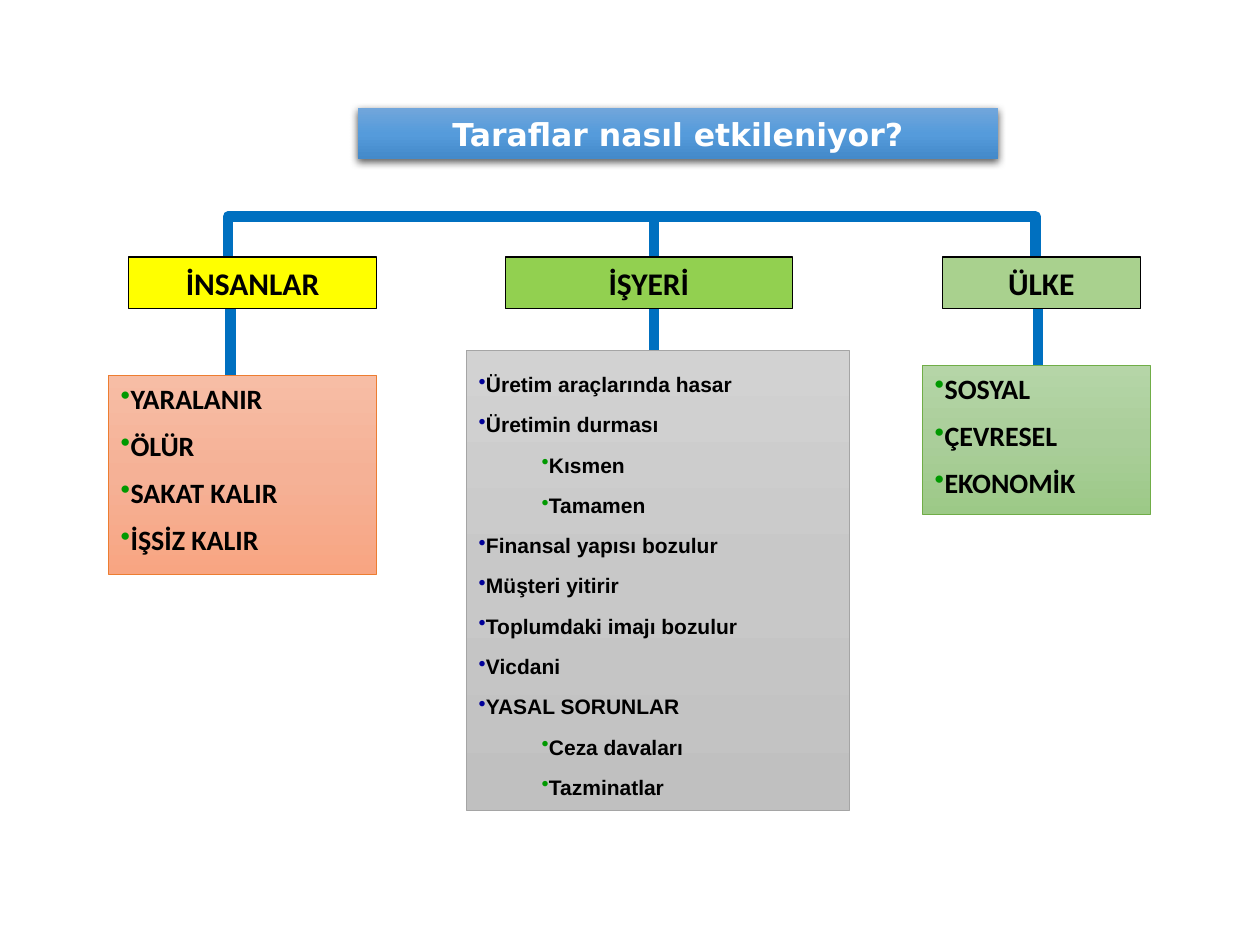
import copy

import lxml.etree
import pptx
import pptx.dml.color
import pptx.enum.shapes
import pptx.enum.text
import pptx.oxml.ns
import pptx.util

Inches = pptx.util.Inches
Pt = pptx.util.Pt
ALIGN = pptx.enum.text.PP_ALIGN
ANCHOR = pptx.enum.text.MSO_ANCHOR

BLUE, GREEN, NAVY, BLACK = "0070C0", "009900", "000099", "000000"


def rgb(color):
    return pptx.dml.color.RGBColor.from_string(color)


def add_xml(parent, tag, **attributes):
    return lxml.etree.SubElement(parent, pptx.oxml.ns.qn(tag), attributes)


def set_line(shape, color, width):
    shape.line.color.rgb = rgb(color)
    shape.line.width = Pt(width)


def fill_gradient(shape, colors):
    """Fill from top to bottom with three evenly spaced colours."""
    shape.fill.gradient()
    shape.fill.gradient_angle = 270
    first = shape.fill._fill._gradFill.gsLst[0]
    first.addnext(copy.deepcopy(first))
    for index, (stop, color) in enumerate(zip(shape.fill.gradient_stops, colors)):
        stop.position = index / 2
        stop.color.rgb = rgb(color)


def add_box(page, left, top, width, height, fill, line=None, line_width=0.5):
    """Add a rectangle; fill is one colour or a list of gradient colours."""
    box = page.shapes.add_shape(
        pptx.enum.shapes.MSO_SHAPE.RECTANGLE,
        Inches(left), Inches(top), Inches(width), Inches(height))
    box.shadow.inherit = False
    if isinstance(fill, str):
        box.fill.solid()
        box.fill.fore_color.rgb = rgb(fill)
    else:
        fill_gradient(box, fill)
    if line:
        set_line(box, line, line_width)
    else:
        box.line.fill.background()
    box.text_frame.word_wrap = True
    return box


def add_shadow(box):
    effects = box._element.spPr.find(pptx.oxml.ns.qn("a:effectLst"))
    shadow = add_xml(effects, "a:outerShdw", blurRad=str(Pt(4.5)), dist=str(Pt(1.5)),
                     dir="5400000", algn="ctr", rotWithShape="0")
    color = add_xml(shadow, "a:srgbClr", val=BLACK)
    add_xml(color, "a:alpha", val="63000")


def write(para, text, font="Calibri", size=18, color=BLACK, align=ALIGN.LEFT,
          bullet=None, level=0, before=0, spacing=1.0):
    para.alignment = align
    para.level = level
    para.space_before = Pt(before)
    para.line_spacing = spacing
    if bullet:
        properties = para._p.get_or_add_pPr()
        properties.set("marL", str(Inches(0.5) * level))
        properties.set("indent", "0")
        add_xml(add_xml(properties, "a:buClr"), "a:srgbClr", val=bullet)
        add_xml(properties, "a:buChar", char="•")
    span = para.add_run()
    span.text = text
    span.font.name = font
    span.font.size = Pt(size)
    span.font.bold = True
    span.font.color.rgb = rgb(color)


def add_label(page, place, fill, text, line=None, **text_format):
    box = add_box(page, *place, fill, line, 0.75)
    box.text_frame.vertical_anchor = ANCHOR.MIDDLE
    write(box.text_frame.paragraphs[0], text, align=ALIGN.CENTER, **text_format)
    return box


def add_list(page, place, fill, line, items, bullets, **text_format):
    """Add a bulleted list of (text, level) items; bullets has a colour per level."""
    box = add_box(page, *place, fill, line)
    frame = box.text_frame
    frame.vertical_anchor = ANCHOR.TOP
    for index, (text, level) in enumerate(items):
        para = frame.add_paragraph() if index else frame.paragraphs[0]
        write(para, text, level=level, bullet=bullets[level], **text_format)


def add_stem(page, x, top, bottom):
    stem = page.shapes.add_connector(
        pptx.enum.shapes.MSO_CONNECTOR.STRAIGHT,
        Inches(x), Inches(top), Inches(x), Inches(bottom))
    set_line(stem, BLUE, 6)
    add_xml(stem._element.spPr, "a:effectLst")


def add_bracket(page, left, right, top, bottom):
    builder = page.shapes.build_freeform(Inches(left), Inches(bottom))
    corners = [(left, top), (right, top), (right, bottom)]
    builder.add_line_segments([(Inches(x), Inches(y)) for x, y in corners], close=False)
    bracket = builder.convert_to_shape()
    bracket.shadow.inherit = False
    bracket.fill.background()
    set_line(bracket, BLUE, 6)


def main():
    deck = pptx.Presentation()
    deck.slide_width, deck.slide_height = Inches(10), Inches(7.5)
    page = deck.slides.add_slide(deck.slide_layouts[6])

    add_bracket(page, 1.81, 8.22, 1.72, 2.06)
    for x, top, bottom in [(5.19, 1.69, 2.31), (1.83, 2.45, 3.21),
                           (5.19, 2.45, 3.22), (8.24, 2.43, 3.2)]:
        add_stem(page, x, top, bottom)

    for text, left, width, fill in [("İŞYERİ", 4.01, 2.28, "92D050"),
                                    ("İNSANLAR", 1.02, 1.97, "FFFF00"),
                                    ("ÜLKE", 7.48, 1.57, "A9D18E")]:
        add_label(page, (left, 2.04, width, 0.41), fill, text, line=BLACK)

    title = add_label(page, (2.84, 0.86, 5.08, 0.4), ["71A6DB", "559BDB", "448ACA"],
                      "Taraflar nasıl etkileniyor?", font="DejaVu Sans", color="FFFFFF")
    add_shadow(title)

    workplace = [("Üretim araçlarında hasar", 0), ("Üretimin durması", 0),
                 ("Kısmen", 1), ("Tamamen", 1), ("Finansal yapısı bozulur", 0),
                 ("Müşteri yitirir", 0), ("Toplumdaki imajı bozulur", 0), ("Vicdani", 0),
                 ("YASAL SORUNLAR", 0), ("Ceza davaları", 1), ("Tazminatlar", 1)]
    add_list(page, (3.7, 2.78, 3.04, 3.65), ["D2D2D2", "C8C8C8", "C0C0C0"], "A5A5A5",
             workplace, [NAVY, GREEN], font="Arial", size=12, spacing=1.6)

    country = ["SOSYAL", "ÇEVRESEL", "EKONOMİK"]
    people = ["YARALANIR", "ÖLÜR", "SAKAT KALIR", "İŞSİZ KALIR"]
    for place, fill, line, words in [
            ((7.32, 2.9, 1.81, 1.18), ["B5D5A7", "AACE9A", "9CC987"], "70AD47", country),
            ((0.86, 2.98, 2.13, 1.58), ["F7BDA5", "F5B196", "F8A582"], "ED7D31", people)]:
        add_list(page, place, fill, line, [(word, 0) for word in words], [GREEN],
                 size=16, before=7.7)

    deck.save("out.pptx")


if __name__ == "__main__":
    main()
